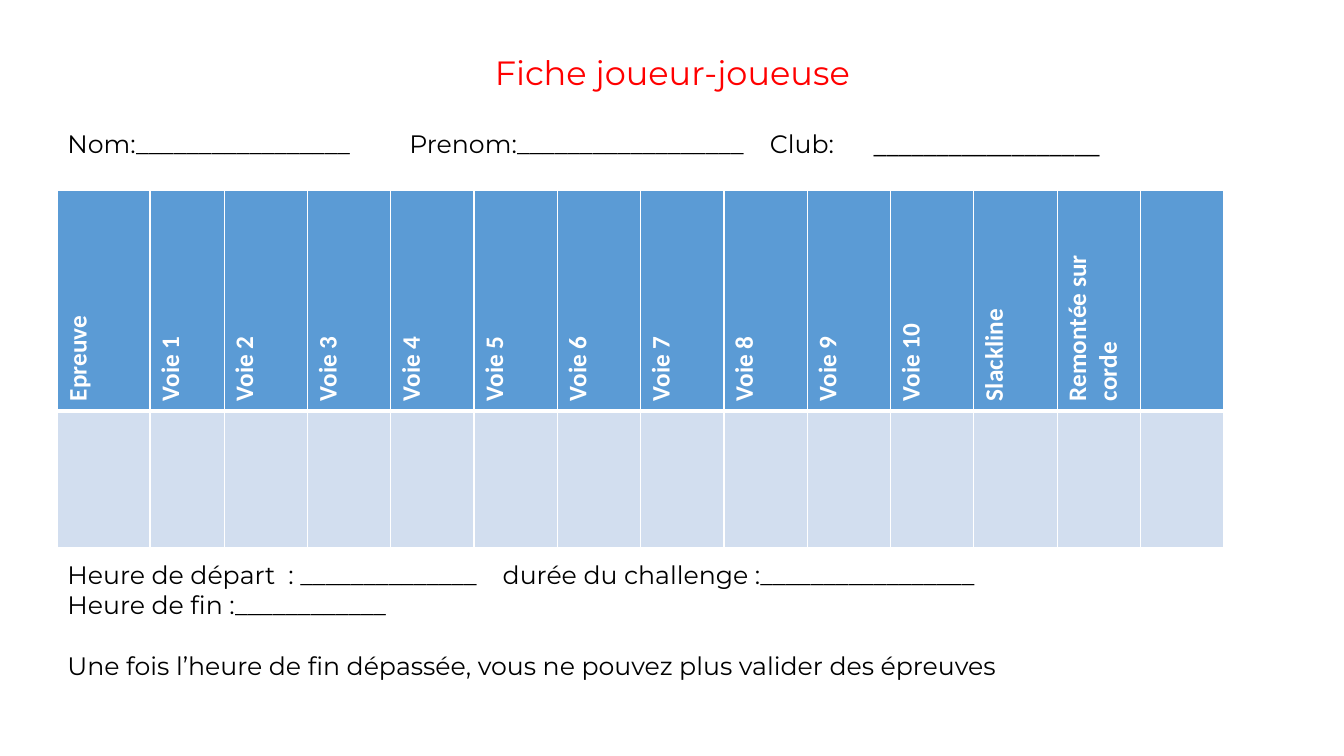
from dataclasses import dataclass
from lxml.etree import SubElement, fromstring
from pptx import Presentation
from pptx.dml.color import RGBColor
from pptx.oxml.ns import nsdecls, qn
from pptx.util import Cm, Pt


@dataclass(frozen=True)
class Theme:
    red: str = "FF0000"
    black: str = "000000"
    white: str = "FFFFFF"
    head: str = "5B9BD5"
    body: str = "D2DEEF"
    sans: str = "Montserrat"
    grid: str = "Calibri"
    title: int = 24
    text: int = 18
    thin: int = 1
    thick: int = 3


THEME = Theme()
TRIALS = ["Epreuve", *(f"Voie {n}" for n in range(1, 11)),
          "Slackline", "Remontée sur corde", ""]


def style(para, font, size, color, bold=False):
    para.font.name = font
    para.font.size = Pt(size)
    para.font.bold = bold
    para.font.color.rgb = RGBColor.from_string(color)


def add_tabs(para, stops):
    tabs = SubElement(para._p.get_or_add_pPr(), qn("a:tabLst"))
    for stop in stops:
        SubElement(tabs, qn("a:tab"), pos=str(Cm(stop)), algn="l")


def add_text(slide, box, lines, size, color, stops=()):
    frame = slide.shapes.add_textbox(*map(Cm, box)).text_frame
    frame.word_wrap = True
    for i, line in enumerate(lines):
        para = frame.add_paragraph() if i else frame.paragraphs[0]
        para.add_run().text = line
        if "\t" in line:
            add_tabs(para, stops)
        style(para, THEME.sans, size, color)
    return frame


def add_edges(cell, widths):
    props = cell._tc.get_or_add_tcPr()
    for i, (side, width) in enumerate(zip("LRTB", widths)):
        props.insert(i, fromstring(
            f'<a:ln{side} {nsdecls("a")} w="{Pt(width)}"><a:solidFill>'
            f'<a:srgbClr val="{THEME.white}"/></a:solidFill></a:ln{side}>'))


# Title
def add_title(slide, box):
    add_text(slide, box, ["Fiche joueur-joueuse"], THEME.title, THEME.red)


# Name, first name and club
def add_names(slide, box):
    line = "Nom:" + "_" * 17 + "\tPrenom:" + "_" * 18 + "\tClub:\t"
    frame = add_text(slide, box, [line], THEME.text, THEME.black,
                     (8.62, 17.7, 20.32))
    blank = frame.paragraphs[0].add_run()
    blank.text = "_" * 18
    blank.font.name = THEME.grid


# Score table: a row of trials above a row to fill in
def add_scores(slide, box):
    table = slide.shapes.add_table(2, len(TRIALS), *map(Cm, box)).table
    first, second = 2.33, 1.87
    rest = (box[2] - first - second) / (len(TRIALS) - 2)
    for i, col in enumerate(table.columns):
        col.width = Cm((first, second)[i] if i < 2 else rest)
    for row, height in zip(table.rows, (3.33, 3.44)):
        row.height = Cm(height)

    thin, thick = THEME.thin, THEME.thick
    looks = ((THEME.head, (thin, thin, thin, thick)),
             (THEME.body, (thin, thin, thick, thin)))
    for row, (color, widths) in zip(table.rows, looks):
        for cell in row.cells:
            cell.fill.solid()
            cell.fill.fore_color.rgb = RGBColor.from_string(color)
            add_edges(cell, widths)

    for cell, trial in zip(table.rows[0].cells, TRIALS):
        if trial:
            cell.text = trial
            cell._tc.get_or_add_tcPr().set("vert", "vert270")
            style(cell.text_frame.paragraphs[0], THEME.grid, THEME.text,
                  THEME.white, True)


# Times and closing rule
def add_times(slide, box):
    lines = ["Heure de départ  : " + "_" * 14
             + "\tdurée du challenge :" + "_" * 17,
             "Heure de fin :" + "_" * 12,
             "Une fois l’heure de fin dépassée, "
             "vous ne pouvez plus valider des épreuves"]
    frame = add_text(slide, box, lines, THEME.text, THEME.black, (10.97,))
    frame.paragraphs[-1].space_before = Pt(22)


def main():
    deck = Presentation()
    deck.slide_width, deck.slide_height = Cm(33.87), Cm(19.05)
    slide = deck.slides.add_slide(deck.slide_layouts[6])
    left = 1.45
    add_names(slide, (left, 3.12, 26.8, 1.02))
    add_scores(slide, (left, 4.8, 29.39, 6.77))
    add_times(slide, (left, 13.97, 29.13, 3.33))
    add_title(slide, (12.22, 1.19, 10.24, 1.27))
    deck.save("out.pptx")


if __name__ == "__main__":
    main()
